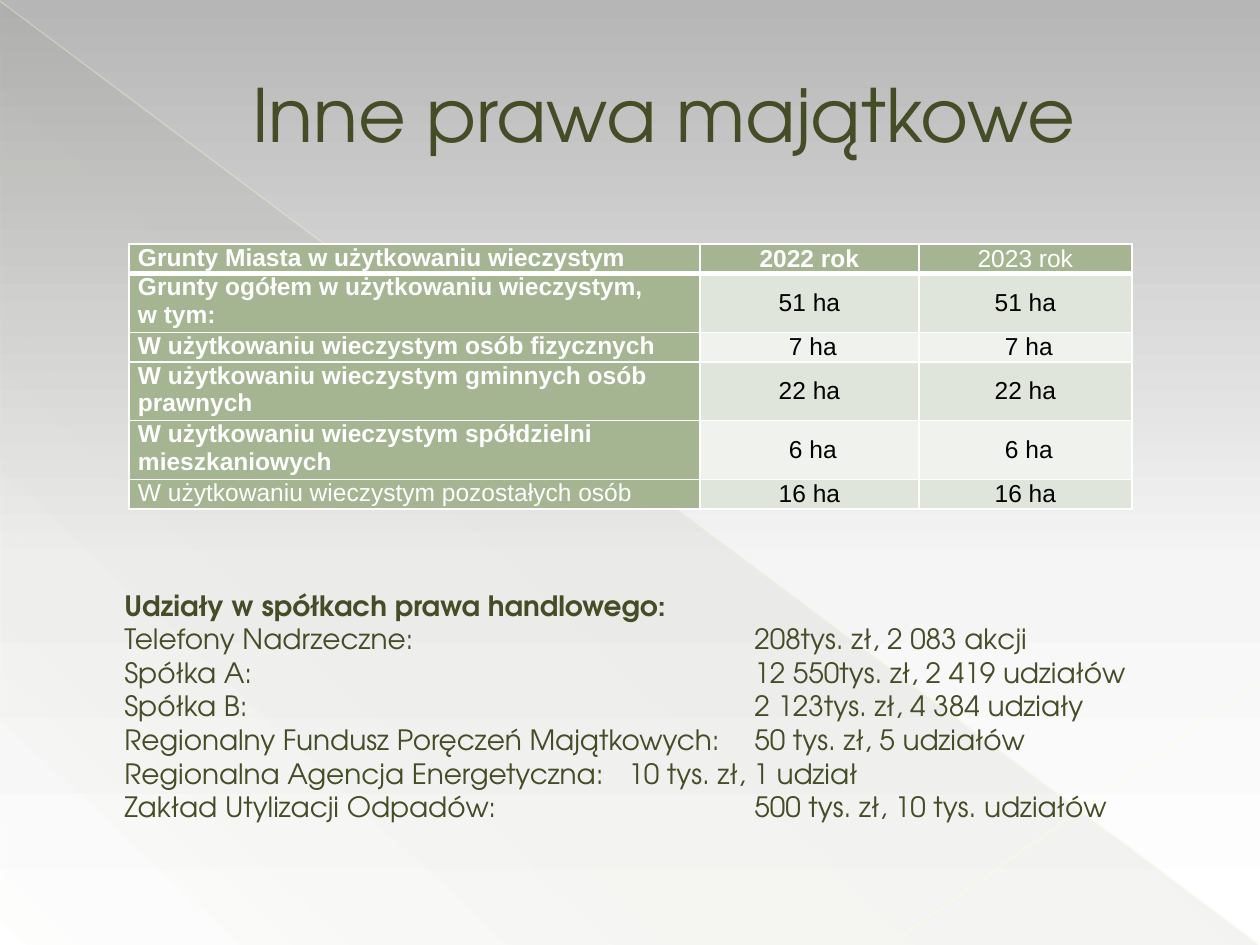
from lxml.etree import SubElement
from pptx import Presentation
from pptx.dml.color import RGBColor
from pptx.enum.shapes import MSO_CONNECTOR, MSO_SHAPE
from pptx.enum.text import MSO_ANCHOR, PP_ALIGN
from pptx.oxml.ns import qn
from pptx.util import Pt

EMU_PER_PX = 914400 // 126
OLIVE = RGBColor(0x44, 0x4D, 0x26)
SAGE = RGBColor(0xA5, 0xB5, 0x92)
BAND_DARK = RGBColor(0xE0, 0xE5, 0xDB)
BAND_LIGHT = RGBColor(0xF0, 0xF2, 0xEE)
WHITE = RGBColor(0xFF, 0xFF, 0xFF)
BLACK = RGBColor(0, 0, 0)
CREAM = RGBColor(0xFF, 0xFF, 0xD5)
PALE_CREAM = RGBColor(0xFF, 0xFF, 0xD9)
GREY = RGBColor(0xB6, 0xB6, 0xB6)
LIGHT_GREY = RGBColor(0xF5, 0xF5, 0xF5)
HEADING_FONT = "TeX Gyre Adventor"
TABLE_FONT = "Arial"

TITLE = "Inne prawa majątkowe"
LAND_ROWS = [
    ("Grunty Miasta w użytkowaniu wieczystym", "2022 rok", "2023 rok"),
    ("Grunty ogółem w użytkowaniu wieczystym, \vw tym:", "51 ha", "51 ha"),
    ("W użytkowaniu wieczystym osób fizycznych", " 7 ha", " 7 ha"),
    ("W użytkowaniu wieczystym gminnych osób prawnych", "22 ha", "22 ha"),
    ("W użytkowaniu wieczystym spółdzielni mieszkaniowych", " 6 ha", " 6 ha"),
    ("W użytkowaniu wieczystym pozostałych osób", "16 ha", "16 ha"),
]
COLUMN_WIDTHS = [571, 219, 213]
ROW_HEIGHTS = [29, 57, 29, 57, 57, 29]

SHARES_HEADING = "Udziały w spółkach prawa handlowego:"
VALUE_TAB, NEAR_TAB = 630, 504
SHARES = [
    ("Telefony Nadrzeczne:", "208tys. zł, 2 083 akcji", VALUE_TAB),
    ("Spółka A:", "12 550tys. zł, 2 419 udziałów", VALUE_TAB),
    ("Spółka B:", "2 123tys. zł, 4 384 udziały", VALUE_TAB),
    ("Regionalny Fundusz Poręczeń Majątkowych:", "50 tys. zł, 5 udziałów", VALUE_TAB),
    ("Regionalna Agencja Energetyczna:", "10 tys. zł, 1 udział", NEAR_TAB),
    ("Zakład Utylizacji Odpadów:", "500 tys. zł, 10 tys. udziałów", VALUE_TAB),
]


def px(*lengths):
    return [length * EMU_PER_PX for length in lengths]


def add_color(parent, color, opacity=100):
    element = SubElement(parent, qn("a:srgbClr"), val=str(color))
    if opacity < 100:
        SubElement(element, qn("a:alpha"), val=str(opacity * 1000))


def set_gradient(fill, owner, stops, angle):
    """Fill with (position %, colour, opacity %) stops, angle clockwise in degrees."""
    fill.gradient()
    gradient = next(owner.iter(qn("a:gradFill")))
    for child in list(gradient):
        gradient.remove(child)
    stop_list = SubElement(gradient, qn("a:gsLst"))
    for position, color, opacity in stops:
        stop = SubElement(stop_list, qn("a:gs"), pos=str(position * 1000))
        add_color(stop, color, opacity)
    SubElement(gradient, qn("a:lin"), ang=str(angle * 60000), scaled="0")


def add_faint_line(slide, ends, color, opacity):
    line = slide.shapes.add_connector(MSO_CONNECTOR.STRAIGHT, *px(*ends))
    line.line.width = Pt(0.75)
    line.line.color.rgb = color
    color_element = next(line.element.spPr.iter(qn("a:srgbClr")))
    SubElement(color_element, qn("a:alpha"), val=str(opacity * 1000))
    SubElement(line.element.spPr, qn("a:effectLst"))


def add_backdrop(slide):
    set_gradient(slide.background.fill, slide.element,
                 [(0, GREY, 100), (60, LIGHT_GREY, 100), (100, WHITE, 100)], 90)
    triangle = slide.shapes.add_shape(MSO_SHAPE.RIGHT_TRIANGLE, *px(1, 2, 1258, 943))
    set_gradient(triangle.fill, triangle.element.spPr,
                 [(0, OLIVE, 7), (70, OLIVE, 5), (100, OLIVE, 0)], 133)
    triangle.line.fill.background()
    triangle.shadow.inherit = False
    add_faint_line(slide, (0, 1, 1259, 944), CREAM, 33)
    add_faint_line(slide, (1260, 682, 891, 944), PALE_CREAM, 42)


def style_font(paragraph, name, size, color, bold=False):
    font = paragraph.font
    font.name, font.size, font.bold = name, Pt(size), bold
    font.color.rgb = color


def add_text_frame(slide, box):
    frame = slide.shapes.add_textbox(*px(*box)).text_frame
    frame.word_wrap = True
    return frame


def add_title(slide):
    frame = add_text_frame(slide, (63, 37, 1134, 152))
    frame.vertical_anchor = MSO_ANCHOR.MIDDLE
    paragraph = frame.paragraphs[0]
    paragraph.text = TITLE
    paragraph.alignment = PP_ALIGN.CENTER
    paragraph._p.get_or_add_pPr().set("marL", str(67 * EMU_PER_PX))
    style_font(paragraph, HEADING_FONT, 42, OLIVE)


def set_borders(cell, top, bottom):
    properties = cell._tc.get_or_add_tcPr()
    for side, width in (("L", 1), ("R", 1), ("T", top), ("B", bottom)):
        border = SubElement(properties, qn(f"a:ln{side}"), w=str(Pt(width)))
        add_color(SubElement(border, qn("a:solidFill")), WHITE)


def add_land_table(slide):
    box = px(129, 244, sum(COLUMN_WIDTHS), sum(ROW_HEIGHTS))
    table = slide.shapes.add_table(len(LAND_ROWS), len(COLUMN_WIDTHS), *box).table
    for column, width in zip(table.columns, px(*COLUMN_WIDTHS)):
        column.width = width
    for row, height in zip(table.rows, px(*ROW_HEIGHTS)):
        row.height = height
    last_row, last_column = len(LAND_ROWS) - 1, len(COLUMN_WIDTHS) - 1
    for r, texts in enumerate(LAND_ROWS):
        for c, text in enumerate(texts):
            cell = table.cell(r, c)
            is_label = r == 0 or c == 0
            set_borders(cell, 3 if r == 1 else 1, 3 if r == 0 else 1)
            cell.fill.solid()
            cell.fill.fore_color.rgb = SAGE if is_label else BAND_DARK if r % 2 else BAND_LIGHT
            cell.margin_left = cell.margin_right = 9 * EMU_PER_PX
            cell.margin_top = cell.margin_bottom = 0
            cell.text = text
            paragraph = cell.text_frame.paragraphs[0]
            if c > 0:
                cell.vertical_anchor = MSO_ANCHOR.MIDDLE
                paragraph.alignment = PP_ALIGN.CENTER
            bold = is_label and r != last_row and c != last_column
            style_font(paragraph, TABLE_FONT, 14, WHITE if is_label else BLACK, bold)


def add_shares(slide):
    frame = add_text_frame(slide, (112, 582, 1037, 285))
    heading = frame.paragraphs[0]
    heading.text = SHARES_HEADING
    style_font(heading, HEADING_FONT, 16, OLIVE, bold=True)
    for company, value, tab in SHARES:
        paragraph = frame.add_paragraph()
        paragraph.text = f"{company}\t{value}"
        style_font(paragraph, HEADING_FONT, 16, OLIVE)
        tabs = paragraph._p.get_or_add_pPr().makeelement(qn("a:tabLst"))
        SubElement(tabs, qn("a:tab"), pos=str(tab * EMU_PER_PX), algn="l")
        paragraph._p.pPr.insert(0, tabs)


def main():
    presentation = Presentation()
    presentation.slide_width, presentation.slide_height = px(1260, 945)
    slide = presentation.slides.add_slide(presentation.slide_layouts[6])
    add_backdrop(slide)
    add_title(slide)
    add_land_table(slide)
    add_shares(slide)
    presentation.save("out.pptx")


if __name__ == "__main__":
    main()
